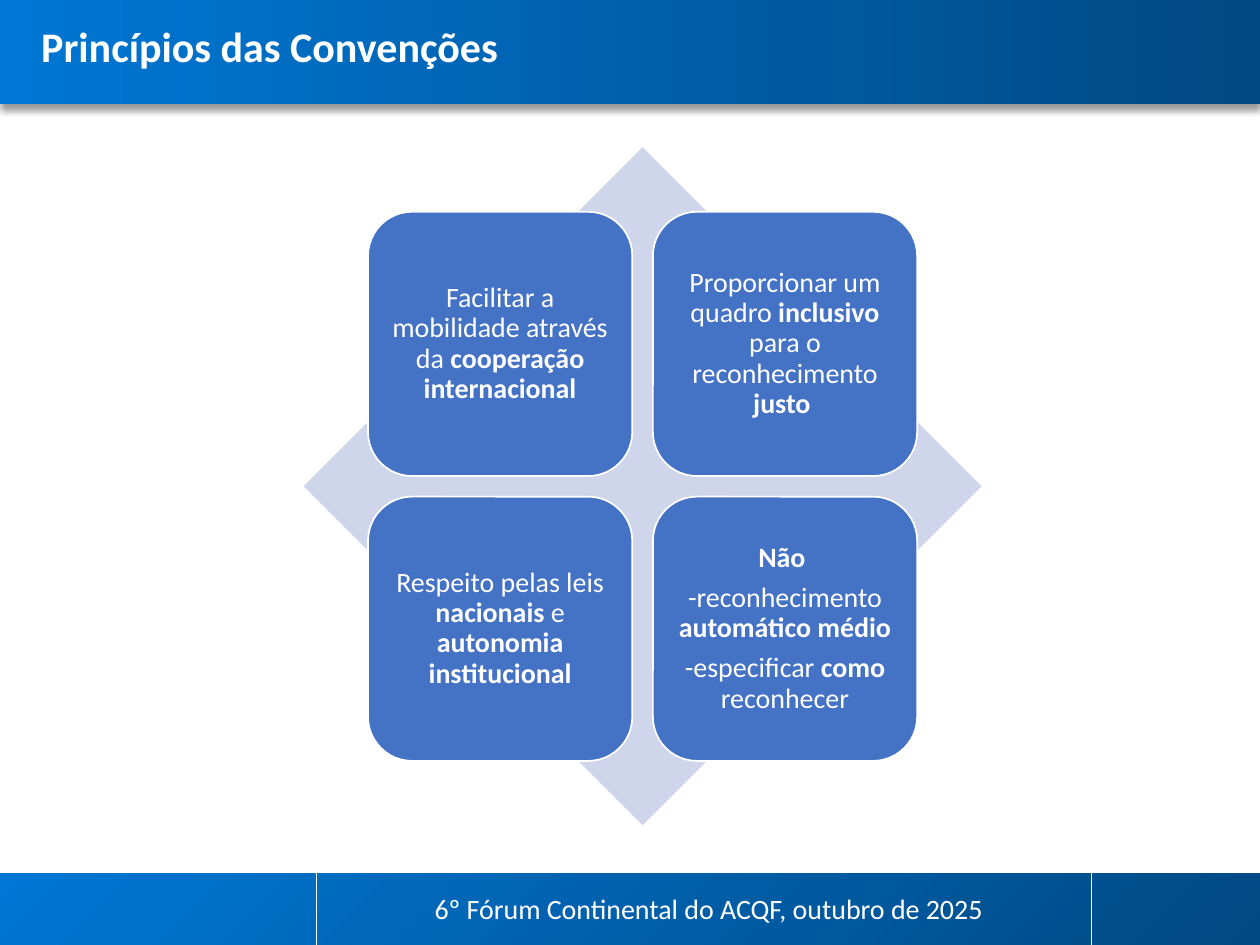
from pptx import Presentation
from pptx.dml.color import RGBColor
from pptx.enum.shapes import MSO_CONNECTOR, MSO_SHAPE
from pptx.enum.text import MSO_ANCHOR, PP_ALIGN
from pptx.oxml import parse_xml
from pptx.oxml.ns import nsdecls
from pptx.util import Pt

STRAIGHT = MSO_CONNECTOR.STRAIGHT
RECTANGLE = MSO_SHAPE.RECTANGLE
DIAMOND = MSO_SHAPE.DIAMOND
ROUNDED = MSO_SHAPE.ROUNDED_RECTANGLE
TOP, MIDDLE = MSO_ANCHOR.TOP, MSO_ANCHOR.MIDDLE
LEFT, CENTER = PP_ALIGN.LEFT, PP_ALIGN.CENTER

WHITE = RGBColor(0xFF, 0xFF, 0xFF)
BRIGHT_BLUE = RGBColor(0x00, 0x77, 0xD4)
DARK_BLUE = RGBColor(0x00, 0x49, 0x83)
TILE_BLUE = RGBColor(0x44, 0x72, 0xC4)
PALE_BLUE = RGBColor(0xCF, 0xD5, 0xEA)

SLIDE_WIDTH, SLIDE_HEIGHT = 720, 540
HEADER_HEIGHT = 59.5
FOOTER_TOP = 499
DIAMOND_LEFT, DIAMOND_TOP, DIAMOND_SIZE = 173.5, 84.2, 387.4
TILE_INSET, TILE_SIZE = 36.8, 151
TILE_PITCH = DIAMOND_SIZE - 2 * TILE_INSET - TILE_SIZE

PRINCIPLES = [
    [[("Facilitar a mobilidade através da ", False),
      ("cooperação internacional", True)]],
    [[("Proporcionar um quadro ", False), ("inclusivo", True),
      (" para o reconhecimento ", False), ("justo ", True)]],
    [[("Respeito pelas leis ", False), ("nacionais", True),
      (" e ", False), ("autonomia institucional", True)]],
    [[("Não ", True)],
     [("-reconhecimento ", False), ("automático médio", True)],
     [("-especificar ", False), ("como", True), (" reconhecer", False)]],
]


def write_text(frame, paragraphs, size=16, align=LEFT, anchor=TOP,
               line_spacing=1.0, space_after=0):
    frame.word_wrap = True
    frame.vertical_anchor = anchor
    for index, runs in enumerate(paragraphs):
        paragraph = frame.add_paragraph() if index else frame.paragraphs[0]
        paragraph.alignment = align
        paragraph.line_spacing = line_spacing
        paragraph.space_after = Pt(space_after)
        for words, bold in runs:
            run = paragraph.add_run()
            run.text = words
            run.font.name = "Calibri"
            run.font.size = Pt(size)
            run.font.bold = bold
            run.font.color.rgb = WHITE


def add_label(slide, left, top, width, height, words, bold=False, **text_format):
    label = slide.shapes.add_textbox(Pt(left), Pt(top), Pt(width), Pt(height))
    write_text(label.text_frame, [[(words, bold)]], **text_format)


def add_block(slide, kind, left, top, width, height):
    block = slide.shapes.add_shape(kind, Pt(left), Pt(top), Pt(width), Pt(height))
    block.shadow.inherit = False
    block.line.fill.background()
    return block


def add_band(slide, top, height, colors, angle):
    band = add_block(slide, RECTANGLE, 0, top, SLIDE_WIDTH, height)
    band.fill.gradient()
    band.fill.gradient_angle = angle
    for stop, color in zip(band.fill.gradient_stops, colors):
        stop.color.rgb = color
    return band


def add_drop_shadow(band):
    effects = band._element.spPr.find(
        "{http://schemas.openxmlformats.org/drawingml/2006/main}effectLst")
    effects.append(parse_xml(
        f'<a:outerShdw {nsdecls("a")} blurRad="{Pt(4)}" dist="{Pt(3)}" '
        'dir="5400000" algn="t" rotWithShape="0"><a:srgbClr val="000000">'
        '<a:alpha val="40000"/></a:srgbClr></a:outerShdw>'))


def add_divider(slide, x):
    divider = slide.shapes.add_connector(
        STRAIGHT, Pt(x), Pt(FOOTER_TOP), Pt(x), Pt(SLIDE_HEIGHT))
    divider.line.color.rgb = WHITE
    divider.line.width = Pt(0.5)
    divider._element.spPr.append(parse_xml(f'<a:effectLst {nsdecls("a")}/>'))


def add_tile(slide, left, top, paragraphs):
    tile = add_block(slide, ROUNDED, left, top, TILE_SIZE, TILE_SIZE)
    tile.fill.solid()
    tile.fill.fore_color.rgb = TILE_BLUE
    tile.line.color.rgb = WHITE
    tile.line.width = Pt(1)
    frame = tile.text_frame
    frame.margin_left = frame.margin_right = Pt(4.8)
    frame.margin_top = frame.margin_bottom = Pt(4.8)
    write_text(frame, paragraphs, align=CENTER, anchor=MIDDLE,
               line_spacing=0.9, space_after=5.6)


def add_matrix(slide):
    diamond = add_block(slide, DIAMOND, DIAMOND_LEFT, DIAMOND_TOP,
                        DIAMOND_SIZE, DIAMOND_SIZE)
    diamond.fill.solid()
    diamond.fill.fore_color.rgb = PALE_BLUE
    for index, paragraphs in enumerate(PRINCIPLES):
        row, column = divmod(index, 2)
        add_tile(slide, DIAMOND_LEFT + TILE_INSET + column * TILE_PITCH,
                 DIAMOND_TOP + TILE_INSET + row * TILE_PITCH, paragraphs)


def main():
    presentation = Presentation()
    presentation.slide_width = Pt(SLIDE_WIDTH)
    presentation.slide_height = Pt(SLIDE_HEIGHT)
    slide = presentation.slides.add_slide(presentation.slide_layouts[6])

    add_band(slide, FOOTER_TOP, SLIDE_HEIGHT - FOOTER_TOP,
             (DARK_BLUE, BRIGHT_BLUE), 135)
    header = add_band(slide, 0, HEADER_HEIGHT, (BRIGHT_BLUE, DARK_BLUE), 0)
    add_drop_shadow(header)
    for x in (180.7, 623.5):
        add_divider(slide, x)

    add_label(slide, 16.5, 11.5, 384.5, 45.4, "Princípios das Convenções",
              bold=True, size=24, line_spacing=0.9)
    add_matrix(slide)
    add_label(slide, 241.2, 506.2, 366.5, 33.8,
              "6º Fórum Continental do ACQF, outubro de 2025")

    presentation.save("out.pptx")


if __name__ == "__main__":
    main()
